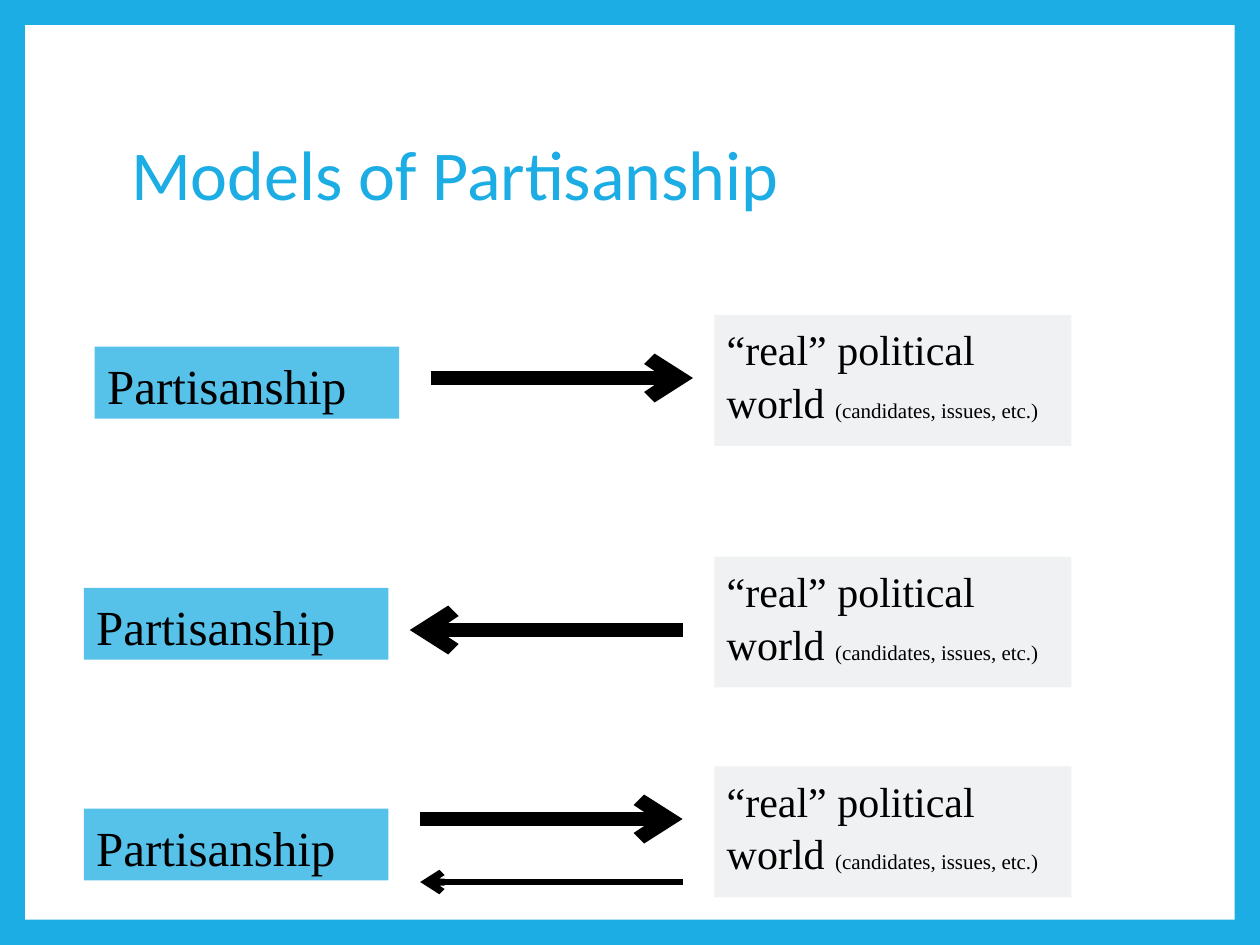
from dataclasses import dataclass

from lxml.etree import SubElement
from pptx import Presentation
from pptx.dml.color import RGBColor
from pptx.enum.shapes import MSO_CONNECTOR as Link, MSO_SHAPE as Preset
from pptx.enum.text import MSO_ANCHOR as Anchor, PP_ALIGN as Align
from pptx.oxml.ns import qn
from pptx.util import Cm, Pt

BLUE, GREY, WHITE, BLACK = "1CADE4", "EFF1F2", "FFFFFF", "000000"
SERIF = "Times New Roman"
PARTY = [("Partisanship", 28)]
WORLD = [("“real” political world ", 24), ("(candidates, issues, etc.)", 12)]


@dataclass
class Arrow:
    start: float
    end: float
    y: float
    width: float = 8


@dataclass
class Model:
    left: float
    party_top: float
    world_top: float
    arrows: list[Arrow]


MODELS = [
    Model(1.91, 6.99, 6.35, [Arrow(8.69, 13.97, 7.62)]),
    Model(1.69, 11.85, 11.22, [Arrow(13.76, 8.26, 12.7)]),
    Model(1.69, 16.3, 15.45,
          [Arrow(8.47, 13.76, 16.51), Arrow(13.76, 8.47, 17.78, 4)]),
]


def paint(fill, color: str):
    fill.solid()
    fill.fore_color.rgb = RGBColor.from_string(color)


def add_box(slide, left: float, top: float, width: float, height: float,
            color: str):
    box = slide.shapes.add_shape(
        Preset.RECTANGLE, Cm(left), Cm(top), Cm(width), Cm(height))
    box.shadow.inherit = False
    paint(box.fill, color)
    box.line.fill.background()
    return box


def write(box, parts: list[tuple[str, int]]):
    frame = box.text_frame
    frame.word_wrap = True
    frame.vertical_anchor = Anchor.TOP
    para = frame.paragraphs[0]
    para.alignment = Align.LEFT
    para.line_spacing = 1.05
    for text, size in parts:
        run = para.add_run()
        run.text = text
        run.font.name, run.font.size = SERIF, Pt(size)
        paint(run.font.fill, BLACK)


def fade(box, percent: int):
    """Set the opacity of a solid fill."""
    color = box.fill._xPr.find(qn("a:solidFill"))[0]
    SubElement(color, qn("a:alpha"), val=str(percent * 1000))


def add_arrow(slide, arrow: Arrow):
    line = slide.shapes.add_connector(
        Link.STRAIGHT, Cm(arrow.start), Cm(arrow.y), Cm(arrow.end), Cm(arrow.y))
    line.line.width = Pt(arrow.width)
    paint(line.line.fill, BLACK)
    SubElement(line.line._get_or_add_ln(), qn("a:tailEnd"), type="arrow")
    SubElement(line._element.spPr, qn("a:effectLst"))


def add_title(slide, text: str):
    title = slide.shapes.title
    title.left, title.top = Cm(2.39), Cm(1.7)
    title.width, title.height = Cm(20.57), Cm(3.76)
    frame = title.text_frame
    frame.text = text
    frame.vertical_anchor = Anchor.MIDDLE
    para = frame.paragraphs[0]
    para.alignment = Align.LEFT
    para.line_spacing = 0.9
    font = para.runs[0].font
    font.name, font.size = "Calibri", Pt(40)
    paint(font.fill, BLUE)


def add_model(slide, model: Model):
    party = add_box(slide, model.left, model.party_top, 6.14, 1.45, BLUE)
    fade(party, 74)
    write(party, PARTY)
    world = add_box(slide, 14.4, model.world_top, 7.2, 2.64, GREY)
    write(world, WORLD)
    for arrow in model.arrows:
        add_arrow(slide, arrow)


def main():
    deck = Presentation()
    deck.slide_width, deck.slide_height = Cm(25.4), Cm(19.05)
    slide = deck.slides.add_slide(deck.slide_layouts[5])
    paint(slide.background.fill, BLUE)
    panel = add_box(slide, 0.51, 0.51, 24.38, 18.03, WHITE)
    slide.shapes.title._element.addprevious(panel._element)
    add_title(slide, "Models of Partisanship")
    for model in MODELS:
        add_model(slide, model)
    deck.save("out.pptx")


if __name__ == "__main__":
    main()
